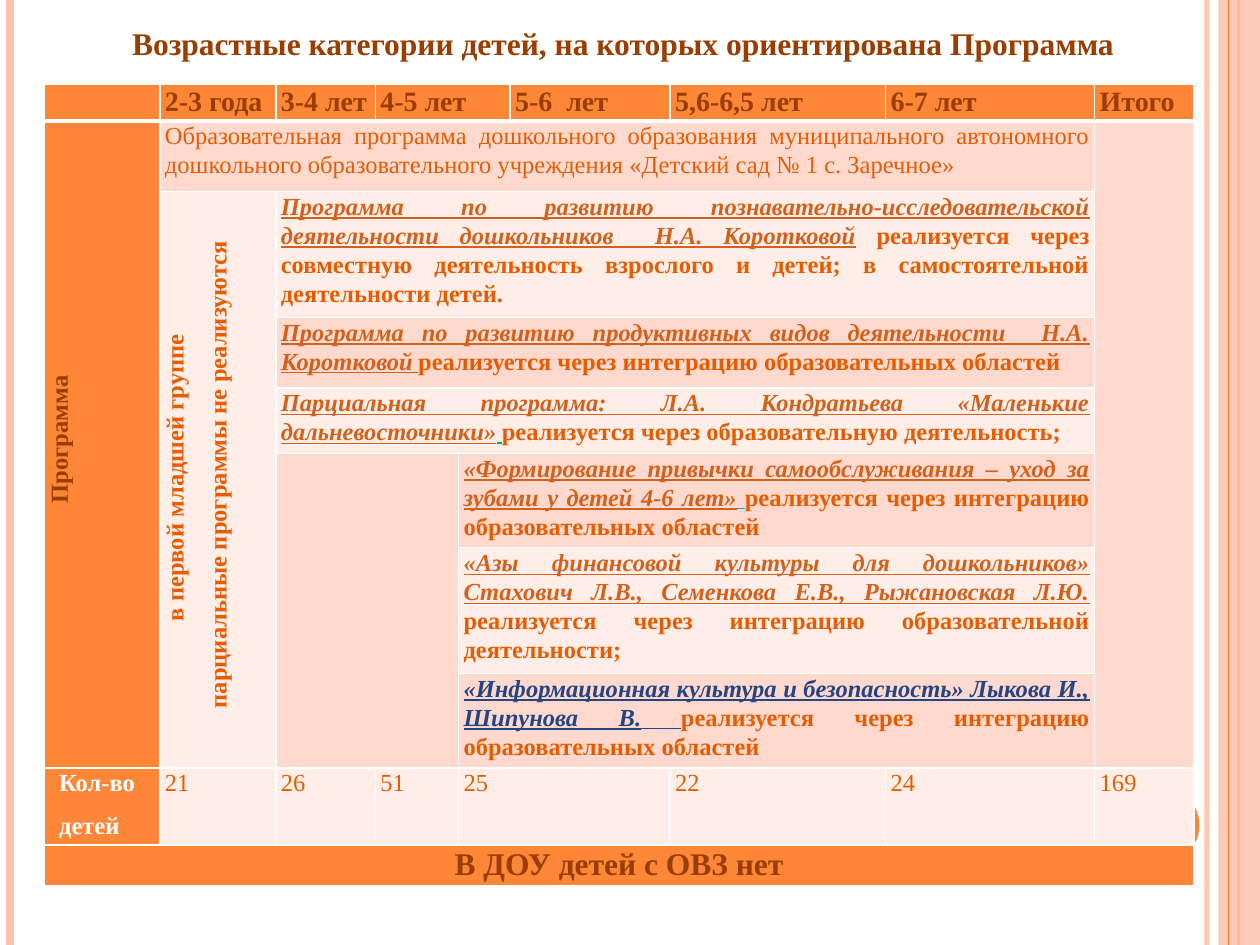
from dataclasses import dataclass

from lxml.etree import SubElement
from pptx import Presentation
from pptx.dml.color import RGBColor
from pptx.enum.shapes import MSO_CONNECTOR, MSO_SHAPE
from pptx.enum.text import PP_ALIGN
from pptx.oxml.ns import qn
from pptx.util import Inches, Pt


@dataclass(frozen=True)
class Theme:
    font: str = "Times New Roman"
    brown: str = "9A3D01"
    orange: str = "E75C01"
    link: str = "D2611C"
    navy: str = "244583"
    white: str = "FFFFFF"
    accent: str = "FE8637"
    stripe: str = "FEC3AE"
    dark_band: str = "FFD9CE"
    light_band: str = "FFEDE8"
    title: int = 18
    header: int = 16
    body: int = 14
    gap: int = 12


THEME = Theme()
WIDTH, HEIGHT = 10, 7.5
COLUMNS = [0.92, 0.92, 0.79, 0.66, 0.41, 1.27, 1.71, 1.66, 0.79]
ROWS = [0.29, 0.56, 0.85, 0.56, 0.52, 0.71, 0.85, 0.71, 0.41, 0.13]

# column, columns covered, label
AGES = [(1, 1, "2-3 года"), (2, 1, "3-4 лет"), (3, 2, "4-5 лет"), (5, 1, "5-6  лет"),
        (6, 1, "5,6-6,5 лет"), (7, 1, "6-7 лет"), (8, 1, "Итого")]
COUNTS = [(1, 1, "21"), (2, 1, "26"), (3, 1, "51"), (4, 2, "25"),
          (6, 1, "22"), (7, 1, "24"), (8, 1, "169")]

# first column, programme, colour, colour and size of the space after it, how it is run
PROGRAMMES = [
    (2, "Программа по развитию познавательно-исследовательской деятельности дошкольников  Н.А. Коротковой",
     THEME.link, "C00000", THEME.body,
     "реализуется через совместную деятельность взрослого и детей; в самостоятельной деятельности детей."),
    (2, "Программа по развитию продуктивных видов деятельности  Н.А. Коротковой",
     THEME.link, "8A7007", THEME.gap, "реализуется через интеграцию образовательных областей"),
    (2, "Парциальная программа: Л.А. Кондратьева «Маленькие дальневосточники»",
     THEME.link, "00B050", THEME.gap, "реализуется через образовательную деятельность; "),
    (4, "«Формирование привычки самообслуживания – уход за зубами у детей 4-6 лет»",
     THEME.link, "00B0F0", THEME.gap, "реализуется через интеграцию образовательных областей"),
    (4, "«Азы финансовой культуры для дошкольников» Стахович Л.В., Семенкова Е.В., Рыжановская Л.Ю.",
     THEME.link, "C00000", THEME.body, "реализуется через интеграцию образовательной деятельности; "),
    (4, "«Информационная культура и безопасность» Лыкова И., Шипунова В.",
     THEME.navy, THEME.navy, THEME.gap, "реализуется через интеграцию образовательных областей"),
]


def style(font, size, color, bold=True, italic=False, underline=False):
    font.name, font.size = THEME.font, Pt(size)
    font.bold, font.italic, font.underline = bold, italic, underline
    font.color.rgb = RGBColor.from_string(color)


def set_alpha(fill_parent, percent):
    color = next(fill_parent.iter(qn("a:srgbClr")))
    SubElement(color, qn("a:alpha"), val=str(percent * 1000))


def add_rule(slide, x, color, width, alpha=100):
    """Vertical line over the whole height of the slide."""
    rule = slide.shapes.add_connector(
        MSO_CONNECTOR.STRAIGHT, Inches(x), 0, Inches(x), Inches(HEIGHT))
    rule.line.color.rgb = RGBColor.from_string(color)
    rule.line.width = Pt(width)
    properties = rule.line._get_or_add_ln().getparent()
    SubElement(properties, qn("a:effectLst"))
    if alpha < 100:
        set_alpha(properties, alpha)


def add_block(slide, kind, color, left, top, width, height, alpha=100):
    block = slide.shapes.add_shape(kind, *map(Inches, (left, top, width, height)))
    block.shadow.inherit = False
    block.fill.solid()
    block.fill.fore_color.rgb = RGBColor.from_string(color)
    block.line.fill.background()
    if alpha < 100:
        set_alpha(block._element.spPr, alpha)


def add_decor(slide):
    add_rule(slide, 9.58, THEME.stripe, 3, alpha=93)
    add_rule(slide, 0.08, THEME.stripe, 4.5)
    add_rule(slide, 9.83, THEME.accent, 1.5)
    add_block(slide, MSO_SHAPE.RECTANGLE, THEME.stripe, 9.67, 0, 0.33, HEIGHT, alpha=87)
    add_rule(slide, 9.75, THEME.accent, 0.75)
    add_block(slide, MSO_SHAPE.OVAL, THEME.accent, 8.92, 6.25, 0.6, 0.6)


def add_title(slide, text):
    frame = slide.shapes.add_textbox(*map(Inches, (0.95, 0.14, 8.1, 0.4))).text_frame
    frame.word_wrap = True
    heading = frame.paragraphs[0]
    heading.text = text
    style(heading.font, THEME.title, THEME.brown)


def prepare_cell(cell, is_header):
    """Narrow margins, white borders and a small size for cells without text."""
    cell.margin_left = cell.margin_right = Inches(0.04)
    cell.margin_top = cell.margin_bottom = 0
    SubElement(cell.text_frame.paragraphs[0]._p, qn("a:endParaRPr"), sz=str(THEME.gap * 100))
    properties = cell._tc.get_or_add_tcPr()
    for side in "LRTB":
        width = 3 if is_header and side == "B" else 1
        border = SubElement(properties, qn(f"a:ln{side}"), w=str(Pt(width)))
        SubElement(SubElement(border, qn("a:solidFill")), qn("a:srgbClr"), val=THEME.white)


def add_grid(slide):
    table = slide.shapes.add_table(
        len(ROWS), len(COLUMNS), *map(Inches, (0.35, 0.67, sum(COLUMNS), sum(ROWS)))).table
    for column, width in zip(table.columns, COLUMNS):
        column.width = Inches(width)
    for index, (row, height) in enumerate(zip(table.rows, ROWS)):
        row.height = Inches(height)
        for cell in row.cells:
            prepare_cell(cell, index == 0)
    return table


def fill_area(table, row, column, fill, rows=1, columns=1):
    """Merge an area of the grid, colour it and return its cell."""
    cell = table.cell(row, column)
    if rows * columns > 1:
        cell.merge(table.cell(row + rows - 1, column + columns - 1))
    cell.fill.solid()
    cell.fill.fore_color.rgb = RGBColor.from_string(fill)
    return cell


def write(cell, lines, size, color, bold=True, align=PP_ALIGN.LEFT, indent=0):
    for index, line in enumerate(lines):
        paragraph = cell.text_frame.add_paragraph() if index else cell.text_frame.paragraphs[0]
        paragraph.add_run().text = line
        style(paragraph.runs[0].font, size, color, bold)
        paragraph.alignment = align
        paragraph.line_spacing, paragraph.space_after = 1.07, Pt(8)
        if indent:
            paragraph._p.get_or_add_pPr().set("marL", str(Inches(indent)))


def write_upward(cell, lines, color):
    cell._tc.get_or_add_tcPr().set("vert", "vert270")
    write(cell, lines, THEME.body, color, align=PP_ALIGN.CENTER, indent=0.08)


def write_programme(cell, name, color, space_color, space_size, method):
    paragraph = cell.text_frame.paragraphs[0]
    paragraph.alignment, paragraph.line_spacing = PP_ALIGN.JUSTIFY, 1.07
    is_first = space_color == "C00000" and name.startswith("Программа")
    for text, size, shade, italic, underline in (
            (name, THEME.body, color, True, True),
            (" ", space_size, space_color, True, not is_first),
            (method, THEME.body, THEME.orange, False, False)):
        run = paragraph.add_run()
        run.text = text
        style(run.font, size, shade, True, italic, underline)


def fill_table(table):
    fill_area(table, 0, 0, THEME.accent)
    for column, span, age in AGES:
        write(fill_area(table, 0, column, THEME.accent, columns=span),
              [age], THEME.header, THEME.brown)

    write_upward(fill_area(table, 1, 0, THEME.accent, rows=7), ["Программа"], THEME.brown)
    write(fill_area(table, 1, 1, THEME.dark_band, columns=7),
          ["Образовательная программа дошкольного образования муниципального автономного "
           "дошкольного образовательного учреждения «Детский сад № 1 с. Заречное»"],
          THEME.body, THEME.orange, bold=False, align=PP_ALIGN.JUSTIFY)
    fill_area(table, 1, 8, THEME.dark_band, rows=7)
    write_upward(fill_area(table, 2, 1, THEME.light_band, rows=6),
                 ["в первой младшей группе ", "парциальные программы не реализуются"], THEME.orange)
    fill_area(table, 5, 2, THEME.dark_band, rows=3, columns=2)
    for row, (column, *programme) in enumerate(PROGRAMMES, start=2):
        band = THEME.dark_band if row % 2 else THEME.light_band
        write_programme(fill_area(table, row, column, band, columns=8 - column), *programme)

    write(fill_area(table, 8, 0, THEME.accent), ["Кол-во", "детей"],
          THEME.body, THEME.white, indent=0.08)
    for column, span, count in COUNTS:
        write(fill_area(table, 8, column, THEME.light_band, columns=span),
              [count], THEME.body, THEME.orange, bold=False)
    write(fill_area(table, 9, 0, THEME.accent, columns=9), ["В ДОУ детей с ОВЗ нет"],
          THEME.title, THEME.brown, align=PP_ALIGN.CENTER)


def main():
    deck = Presentation()
    deck.slide_width, deck.slide_height = Inches(WIDTH), Inches(HEIGHT)
    slide = deck.slides.add_slide(deck.slide_layouts[6])
    add_decor(slide)
    add_title(slide, "Возрастные категории детей, на которых ориентирована Программа")
    fill_table(add_grid(slide))
    deck.save("out.pptx")


if __name__ == "__main__":
    main()
